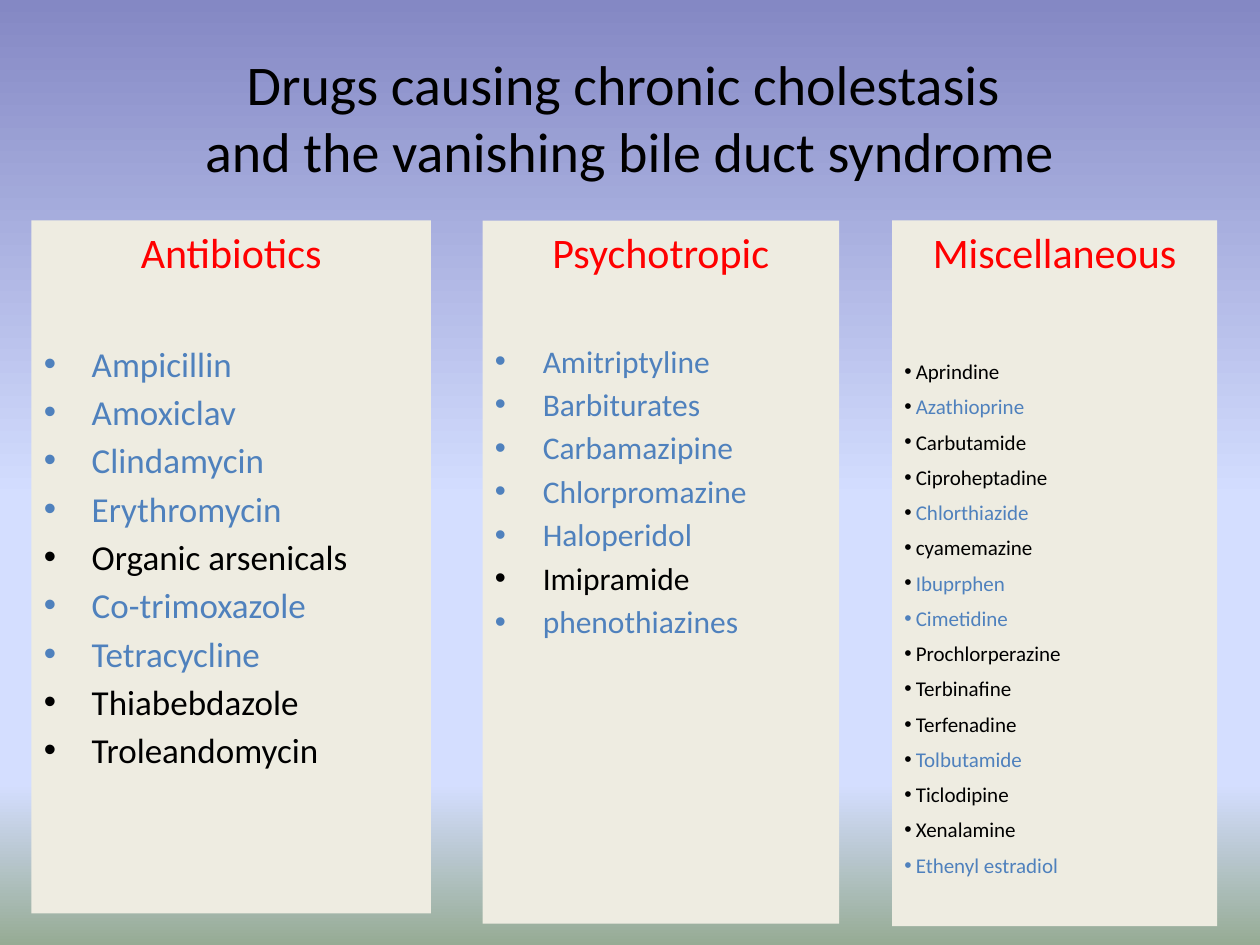
from lxml import etree
from pptx import Presentation
from pptx.dml.color import RGBColor
from pptx.enum import shapes, text
from pptx.oxml import ns
from pptx.util import Inches, Pt

BLACK = RGBColor(0x00, 0x00, 0x00)
RED = RGBColor(0xFF, 0x00, 0x00)
BLUE = RGBColor(0x4F, 0x81, 0xBD)
CREAM = RGBColor(0xEE, 0xEC, 0xE1)
SKY = [
    (0, RGBColor(0x84, 0x88, 0xC4)),
    (53, RGBColor(0xD4, 0xDE, 0xFF)),
    (83, RGBColor(0xD4, 0xDE, 0xFF)),
    (100, RGBColor(0x96, 0xAB, 0x94)),
]
FONT = "Calibri"
HEADING_SIZE = 24
LINE_HEIGHT = 1.22

ANTIBIOTICS = [
    ("Ampicillin", BLUE), ("Amoxiclav", BLUE), ("Clindamycin", BLUE),
    ("Erythromycin", BLUE), ("Organic arsenicals", BLACK),
    ("Co-trimoxazole", BLUE), ("Tetracycline", BLUE),
    ("Thiabebdazole", BLACK), ("Troleandomycin", BLACK),
]
PSYCHOTROPIC = [
    ("Amitriptyline", BLUE), ("Barbiturates", BLUE), ("Carbamazipine", BLUE),
    ("Chlorpromazine", BLUE), ("Haloperidol", BLUE), ("Imipramide", BLACK),
    ("phenothiazines", BLUE),
]
MISCELLANEOUS = [
    ("Aprindine", BLACK), ("Azathioprine", BLUE), ("Carbutamide", BLACK),
    ("Ciproheptadine", BLACK), ("Chlorthiazide", BLUE), ("cyamemazine", BLACK),
    ("Ibuprphen", BLUE), ("Cimetidine", BLUE), ("Prochlorperazine", BLACK),
    ("Terbinafine", BLACK), ("Terfenadine", BLACK), ("Tolbutamide", BLUE),
    ("Ticlodipine", BLACK), ("Xenalamine", BLACK), ("Ethenyl estradiol", BLUE),
]
BLACK_BULLETS = {"Azathioprine", "Chlorthiazide", "Ibuprphen", "Tolbutamide"}


def add_child(parent, tag, **attributes):
    """Append a DrawingML element to its parent."""
    return etree.SubElement(parent, ns.qn(tag), attributes)


def paint_background(slide):
    """Fill the slide with the vertical sky gradient."""
    fill = slide.background.fill
    fill.gradient()
    fill.gradient_angle = 270
    properties = slide.background.fill._xPr
    stops = properties.find(".//" + ns.qn("a:gsLst"))
    for stop in list(stops):
        stops.remove(stop)
    for position, color in SKY:
        stop = add_child(stops, "a:gs", pos=str(position * 1000))
        add_child(stop, "a:srgbClr", val=str(color))


def write(paragraph, words, *, size, color=BLACK, align=text.PP_ALIGN.LEFT,
          before=0, after=0):
    """Put formatted words into a paragraph."""
    paragraph.text = words
    paragraph.alignment = align
    paragraph.space_before = Pt(before)
    paragraph.space_after = Pt(after)
    for run in paragraph.runs:
        run.font.name = FONT
        run.font.size = Pt(size)
        run.font.color.rgb = color


def add_bullet(paragraph, indent, color):
    """Give a paragraph a hanging round bullet."""
    properties = paragraph._p.get_or_add_pPr()
    properties.set("marL", str(indent))
    properties.set("indent", str(-indent))
    bullet_color = add_child(properties, "a:buClr")
    add_child(bullet_color, "a:srgbClr", val=str(color))
    add_child(properties, "a:buFont", typeface="Arial")
    add_child(properties, "a:buChar", char="•")


def add_title(slide, left, top, width, height):
    """Place the centred two-line title."""
    frame = slide.shapes.add_textbox(left, top, width, height).text_frame
    frame.word_wrap = True
    frame.vertical_anchor = text.MSO_ANCHOR.MIDDLE
    write(frame.paragraphs[0],
          "Drugs causing chronic cholestasis \vand the vanishing bile duct syndrome",
          size=32, align=text.PP_ALIGN.CENTER)


def add_drug_panel(slide, left, top, width, height, *, heading, drugs, size,
                   indent, spacing):
    """Place a panel with a heading and a bulleted drug list."""
    panel = slide.shapes.add_shape(
        shapes.MSO_SHAPE.RECTANGLE, left, top, width, height)
    panel.shadow.inherit = False
    panel.fill.solid()
    panel.fill.fore_color.rgb = CREAM
    panel.line.fill.background()
    frame = panel.text_frame
    frame.word_wrap = True
    frame.vertical_anchor = text.MSO_ANCHOR.TOP
    write(frame.paragraphs[0], heading, size=HEADING_SIZE, color=RED,
          align=text.PP_ALIGN.CENTER,
          after=HEADING_SIZE * (LINE_HEIGHT + spacing))
    for drug, color in drugs:
        paragraph = frame.add_paragraph()
        write(paragraph, drug, size=size, color=color, before=size * spacing)
        add_bullet(paragraph, indent, BLACK if drug in BLACK_BULLETS else color)


def main():
    """Build and save the slide."""
    presentation = Presentation()
    presentation.slide_width = Inches(10)
    presentation.slide_height = Inches(7.5)
    slide = presentation.slides.add_slide(presentation.slide_layouts[6])
    paint_background(slide)
    add_title(slide, Inches(0.5), Inches(0.3), Inches(9), Inches(1.25))
    top = Inches(1.75)
    add_drug_panel(slide, Inches(0.25), top, Inches(3.17), Inches(5.5),
                   heading="Antibiotics", drugs=ANTIBIOTICS, size=20,
                   indent=Inches(0.38), spacing=0.18)
    add_drug_panel(slide, Inches(3.83), top, Inches(2.83), Inches(5.58),
                   heading="Psychotropic", drugs=PSYCHOTROPIC, size=18,
                   indent=Inches(0.38), spacing=0.18)
    add_drug_panel(slide, Inches(7.08), top, Inches(2.58), Inches(5.6),
                   heading="Miscellaneous", drugs=MISCELLANEOUS, size=12,
                   indent=Inches(0.09), spacing=0.48)
    presentation.save("out.pptx")


if __name__ == "__main__":
    main()
